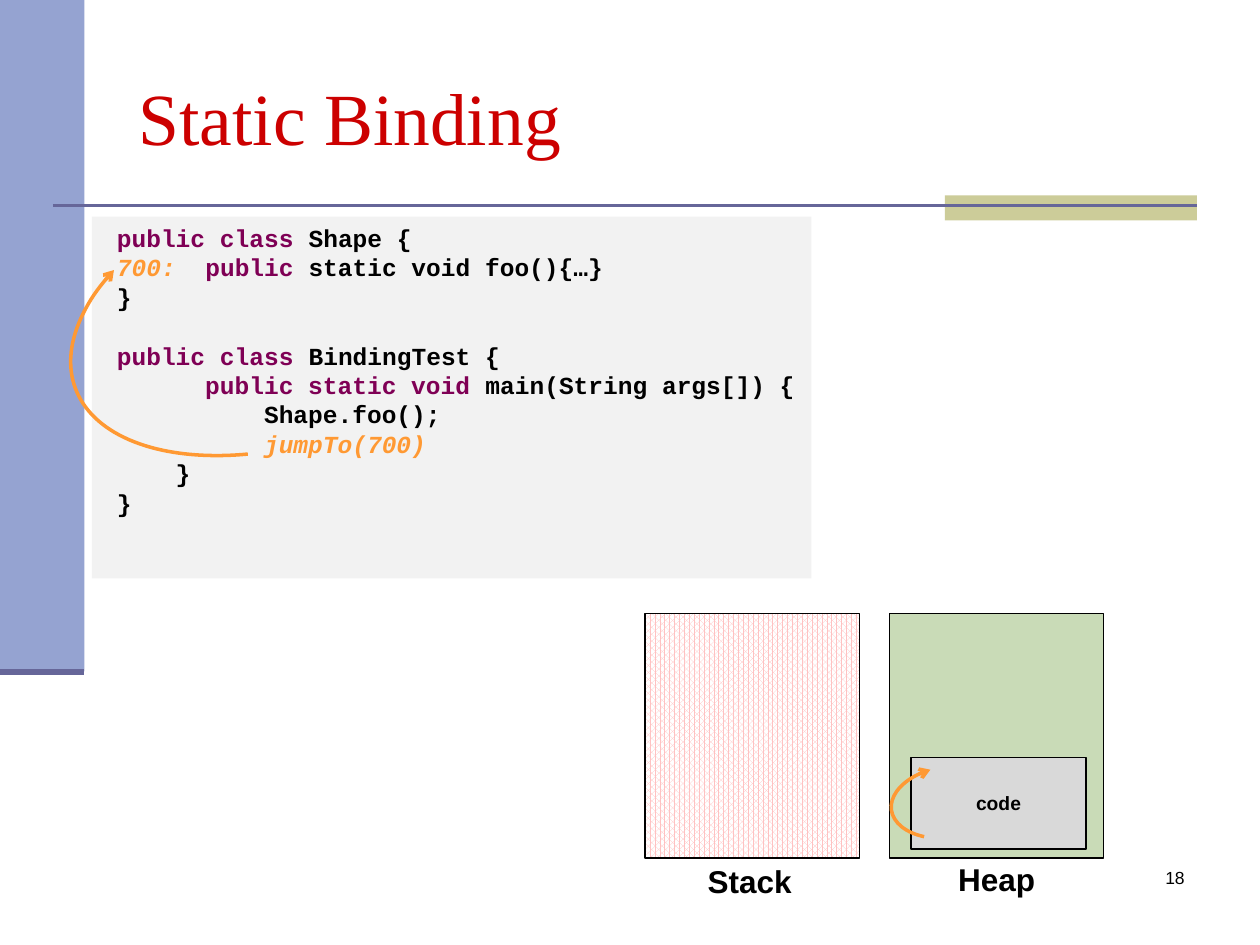
"""Build the Static Binding slide: code listing with stack and heap diagrams."""
from dataclasses import dataclass

from lxml import etree
from pptx import Presentation
from pptx.dml.color import RGBColor
from pptx.enum.dml import MSO_PATTERN
from pptx.enum.shapes import MSO_CONNECTOR, MSO_SHAPE
from pptx.enum.text import MSO_ANCHOR, PP_ALIGN
from pptx.oxml.ns import qn
from pptx.util import Inches, Pt

RECTANGLE, ARC = MSO_SHAPE.RECTANGLE, MSO_SHAPE.ARC
STRAIGHT = MSO_CONNECTOR.STRAIGHT
DOTS = MSO_PATTERN.PERCENT_75
LEFT, CENTER, RIGHT = PP_ALIGN.LEFT, PP_ALIGN.CENTER, PP_ALIGN.RIGHT
TOP, MIDDLE = MSO_ANCHOR.TOP, MSO_ANCHOR.MIDDLE
COLUMNS, ROWS = 100, 75


@dataclass(frozen=True)
class Theme:
    black: str = "000000"
    white: str = "FFFFFF"
    red: str = "CC0000"
    sidebar: str = "95A3D1"
    rule: str = "666699"
    accent: str = "CCCC99"
    panel: str = "F2F2F2"
    keyword: str = "7F0055"
    jump: str = "FF9933"
    heap: str = "C9DBB7"
    stack: str = "FFC2C2"
    code_block: str = "D9D9D9"
    sans: str = "Arial"
    serif: str = "Times New Roman"
    mono: str = "Courier New"
    title_size: float = 42
    label_size: float = 18
    code_size: float = 14
    block_size: float = 11
    number_size: float = 10
    code_pitch: float = 16.8


def rgb(color):
    return RGBColor.from_string(color)


def add_span(para, text, *, font, size, color, bold=False, italic=False):
    span = para.add_run()
    span.text = text
    span.font.name, span.font.size = font, Pt(size)
    span.font.bold, span.font.italic = bold, italic
    span.font.color.rgb = rgb(color)


def write(frame, text, *, align=LEFT, anchor=TOP, **style):
    frame.word_wrap = True
    frame.vertical_anchor = anchor
    para = frame.paragraphs[0]
    para.alignment = align
    add_span(para, text, **style)


class SlideBuilder:
    def __init__(self, deck, theme):
        self.theme = theme
        self.cell_width = deck.slide_width / COLUMNS
        self.cell_height = deck.slide_height / ROWS
        self.page = deck.slides.add_slide(deck.slide_layouts[5])

    def place(self, column, row, width, height):
        return (round(column * self.cell_width), round(row * self.cell_height),
                round(width * self.cell_width), round(height * self.cell_height))

    def title(self, text, *area):
        box = self.page.shapes.title
        box.left, box.top, box.width, box.height = self.place(*area)
        write(box.text_frame, text, anchor=MIDDLE, font=self.theme.serif,
              size=self.theme.title_size, color=self.theme.red)

    def rectangle(self, *area, fill, outlined=False, dots=False):
        box = self.page.shapes.add_shape(RECTANGLE, *self.place(*area))
        box.shadow.inherit = False
        if dots:
            box.fill.patterned()
            box.fill.pattern = DOTS
            box.fill.fore_color.rgb = rgb(fill)
            box.fill.back_color.rgb = rgb(self.theme.white)
        else:
            box.fill.solid()
            box.fill.fore_color.rgb = rgb(fill)
        if outlined:
            box.line.color.rgb = rgb(self.theme.black)
            box.line.width = Pt(0.75)
        else:
            box.line.fill.background()
        return box

    def rule(self, start, row, end, weight):
        left, top, length, _ = self.place(start, row, end - start, 0)
        line = self.page.shapes.add_connector(STRAIGHT, left, top, left + length, top)
        line.line.color.rgb = rgb(self.theme.rule)
        line.line.width = Pt(weight)
        etree.SubElement(line._element.spPr, qn("a:effectLst"))

    def curved_arrow(self, *area, rotation, start, end):
        arrow = self.page.shapes.add_shape(ARC, *self.place(*area))
        arrow.shadow.inherit = False
        arrow.rotation = rotation
        for index, degrees in enumerate((start, end)):
            arrow.adjustments[index] = degrees * 0.6
        arrow.fill.background()
        arrow.line.color.rgb = rgb(self.theme.jump)
        arrow.line.width = Pt(2)
        etree.SubElement(arrow.line._get_or_add_ln(), qn("a:tailEnd"), type="arrow")

    def text(self, text, *area, **style):
        box = self.page.shapes.add_textbox(*self.place(*area))
        write(box.text_frame, text, font=self.theme.sans, color=self.theme.black, **style)

    def code(self, blocks, *area):
        frame = self.page.shapes.add_textbox(*self.place(*area)).text_frame
        frame.word_wrap = True
        para = None
        for block in blocks:
            for number, line in enumerate(block):
                follows_block = para is not None and number == 0
                para = frame.add_paragraph() if para is not None else frame.paragraphs[0]
                para.line_spacing = Pt(self.theme.code_pitch)
                para.space_before = Pt(self.theme.code_pitch if follows_block else 0)
                for text, color in line:
                    add_span(para, text, font=self.theme.mono, size=self.theme.code_size,
                             color=color, bold=True, italic=color == self.theme.jump)


def main():
    deck = Presentation()
    deck.slide_width, deck.slide_height = Inches(10), Inches(7.5)
    theme = Theme()
    slide = SlideBuilder(deck, theme)

    slide.rectangle(0, 0, 6.7, 53.3, fill=theme.sidebar)
    slide.rectangle(75, 15.5, 20, 2, fill=theme.accent)
    slide.rule(4.2, 16.3, 95, 1.5)
    slide.rule(0, 53.3, 6.7, 3.5)
    slide.title("Static Binding", 10, 3, 85, 12.5)

    slide.rectangle(70.6, 48.7, 17, 19.4, fill=theme.heap, outlined=True)
    slide.rectangle(51.2, 48.7, 17, 19.4, fill=theme.stack, outlined=True, dots=True)
    block = slide.rectangle(72.3, 60.1, 13.9, 7.3, fill=theme.code_block, outlined=True)
    write(block.text_frame, "code", align=CENTER, anchor=MIDDLE, font=theme.sans,
          size=theme.block_size, color=theme.black, bold=True)

    keyword, plain, jump = theme.keyword, theme.black, theme.jump
    shape_class = [
        [("public class ", keyword), ("Shape {", plain)],
        [("700:  ", jump), ("public", keyword), (" static void foo(){…}", plain)],
        [("}", plain)],
    ]
    test_class = [
        [("public class ", keyword), ("BindingTest {", plain)],
        [("      public static void", keyword), (" main(String args[]) {", plain)],
        [("          Shape.foo();", plain)],
        [("          jumpTo(700)", jump)],
        [("    }", plain)],
        [("}", plain)],
    ]
    slide.rectangle(7.3, 17.2, 57.1, 28.7, fill=theme.panel)
    slide.code([shape_class, test_class], 8.3, 17.2, 66.4, 24.6)

    slide.curved_arrow(4.8, 13.5, 38.9, 21.3, rotation=160.1, start=310.98, end=30.03)
    slide.curved_arrow(70.7, 60.8, 9.4, 5.7, rotation=172.3, start=314.59, end=66.34)
    for name, column, row in (("Heap", 70.6, 67.8), ("Stack", 51, 67.9)):
        slide.text(name, column, row, 17, 4, align=CENTER, size=theme.label_size, bold=True)
    slide.text("18", 74.2, 68.3, 20.8, 5, align=RIGHT, size=theme.number_size)

    deck.save("out.pptx")


if __name__ == "__main__":
    main()
